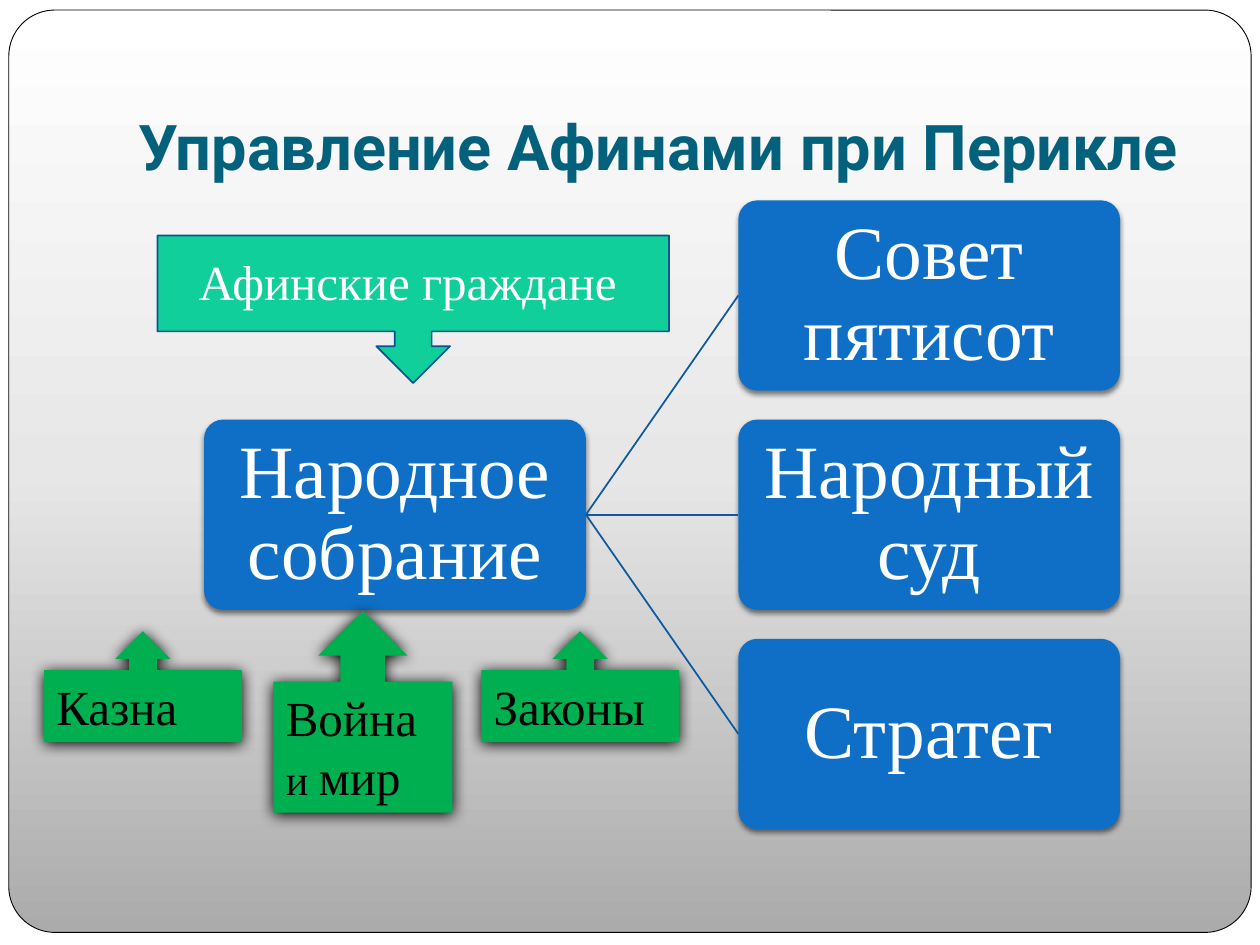
from dataclasses import dataclass

from lxml.etree import SubElement
from pptx import Presentation
from pptx.dml.color import RGBColor
from pptx.enum.shapes import MSO_CONNECTOR, MSO_SHAPE
from pptx.enum.text import MSO_ANCHOR, MSO_AUTO_SIZE, PP_ALIGN
from pptx.oxml.ns import qn
from pptx.shapes.autoshape import Shape
from pptx.slide import Slide
from pptx.util import Inches, Pt


@dataclass(frozen=True)
class Theme:
    title_font: str = "Roboto"
    body_font: str = "Times New Roman"
    title: str = "04617B"
    body: str = "0F6FC6"
    link: str = "0C599F"
    power: str = "00B050"
    citizens: str = "10CF9B"
    citizens_line: str = "0B5292"
    light: str = "FFFFFF"
    dark: str = "000000"
    backdrop: tuple = ((0, "ABABAB"), (50, "E7E7E7"), (100, "FFFFFF"))
    title_size: int = 36
    body_size: int = 43
    label_size: int = 28
    small_size: int = 24


@dataclass(frozen=True)
class Box:
    left: float
    top: float
    width: float
    height: float

    def emu(self) -> tuple:
        return tuple(Inches(v) for v in (self.left, self.top, self.width, self.height))


@dataclass(frozen=True)
class Shadow:
    opacity: int
    blur: float
    distance: float


@dataclass(frozen=True)
class Power:
    runs: tuple
    box: Box


THEME = Theme()
BODY_WIDTH, BODY_HEIGHT = 3.03, 1.51
BODY_TOP, BODY_STEP = 1.59, 1.74
ASSEMBLY_LEFT, BRANCH_LEFT = 1.62, 5.86
BODY_SHADOW = Shadow(50, 3, 2)
POWER_SHADOW = Shadow(100, 8.5, 1)
BRANCHES = ("Совет пятисот", "Народный суд", "Стратег")
POWERS = (
    Power((("Казна", THEME.label_size),), Box(0.35, 5.01, 1.57, 0.88)),
    Power((("Законы", THEME.label_size),), Box(3.82, 5.01, 1.57, 0.88)),
    Power(
        (("Война", THEME.label_size), (" и ", THEME.small_size), ("мир", THEME.label_size)),
        Box(2.17, 4.85, 1.42, 1.6),
    ),
)


def rgb(value: str) -> RGBColor:
    return RGBColor.from_string(value)


def style_font(font, name: str, color: str, size: int | None = None) -> None:
    font.name = name
    font.color.rgb = rgb(color)
    if size:
        font.size = Pt(size)


def add_plain(slide: Slide, kind: MSO_SHAPE, box: Box, fill: str) -> Shape:
    shape = slide.shapes.add_shape(kind, *box.emu())
    shape.shadow.inherit = False
    shape.fill.solid()
    shape.fill.fore_color.rgb = rgb(fill)
    shape.line.fill.background()
    return shape


def outline(shape: Shape, color: str, width: float) -> None:
    shape.line.color.rgb = rgb(color)
    shape.line.width = Pt(width)


def cast_shadow(shape: Shape, shadow: Shadow) -> None:
    effects = shape._element.spPr.find(qn("a:effectLst"))
    outer = SubElement(
        effects, qn("a:outerShdw"), blurRad=str(int(Pt(shadow.blur))),
        dist=str(int(Pt(shadow.distance))), dir="5400000", rotWithShape="0",
    )
    color = SubElement(outer, qn("a:srgbClr"), val=THEME.dark)
    SubElement(color, qn("a:alpha"), val=str(shadow.opacity * 1000))


def add_frame(slide: Slide) -> None:
    frame = add_plain(slide, MSO_SHAPE.ROUNDED_RECTANGLE, Box(0.07, 0.08, 9.86, 7.32), THEME.light)
    frame.adjustments[0] = 0.05
    outline(frame, THEME.dark, 0.5)
    frame.fill.gradient()
    gradient = frame._element.spPr.find(qn("a:gradFill"))
    for child in list(gradient):
        gradient.remove(child)
    stops = SubElement(gradient, qn("a:gsLst"))
    for position, color in THEME.backdrop:
        stop = SubElement(stops, qn("a:gs"), pos=str(position * 1000))
        SubElement(stop, qn("a:srgbClr"), val=color)
    SubElement(gradient, qn("a:lin"), ang="16200000", scaled="0")
    slide.shapes._spTree.insert(2, frame._element)


def add_title(slide: Slide, text: str) -> None:
    title = slide.shapes.title
    title.left, title.top, title.width, title.height = Box(1, 0.3, 8.5, 1.25).emu()
    frame = title.text_frame
    frame.text = text
    frame.auto_size = MSO_AUTO_SIZE.NONE
    frame.vertical_anchor = MSO_ANCHOR.BOTTOM
    frame.margin_bottom = Inches(0.1)
    paragraph = frame.paragraphs[0]
    paragraph.alignment = PP_ALIGN.LEFT
    paragraph.font.bold = True
    style_font(paragraph.font, THEME.title_font, THEME.title, THEME.title_size)


def add_body(slide: Slide, text: str, left: float, row: int) -> Shape:
    box = Box(left, BODY_TOP + row * BODY_STEP, BODY_WIDTH, BODY_HEIGHT)
    body = add_plain(slide, MSO_SHAPE.ROUNDED_RECTANGLE, box, THEME.body)
    body.adjustments[0] = 0.1
    cast_shadow(body, BODY_SHADOW)
    frame = body.text_frame
    frame.word_wrap = True
    frame.vertical_anchor = MSO_ANCHOR.MIDDLE
    frame.margin_left = frame.margin_right = Inches(0.03)
    frame.margin_top = frame.margin_bottom = Inches(0.03)
    frame.text = text
    paragraph = frame.paragraphs[0]
    paragraph.alignment = PP_ALIGN.CENTER
    paragraph.line_spacing = 0.9
    style_font(paragraph.font, THEME.body_font, THEME.light, THEME.body_size)
    return body


def link(slide: Slide, source: Shape, target: Shape) -> None:
    line = slide.shapes.add_connector(MSO_CONNECTOR.STRAIGHT, 0, 0, 0, 0)
    line.begin_connect(source, 3)
    line.end_connect(target, 1)
    line.line.color.rgb = rgb(THEME.link)
    line.line.width = Pt(1)
    SubElement(line._element.spPr, qn("a:effectLst"))


def add_power(slide: Slide, power: Power) -> None:
    callout = add_plain(slide, MSO_SHAPE.UP_ARROW_CALLOUT, power.box, THEME.power)
    cast_shadow(callout, POWER_SHADOW)
    frame = callout.text_frame
    frame.word_wrap = True
    frame.vertical_anchor = MSO_ANCHOR.TOP
    paragraph = frame.paragraphs[0]
    paragraph.alignment = PP_ALIGN.LEFT
    style_font(paragraph.font, THEME.body_font, THEME.dark)
    for text, size in power.runs:
        run = paragraph.add_run()
        run.text = text
        run.font.size = Pt(size)


def add_citizens(slide: Slide, text: str) -> None:
    callout = add_plain(slide, MSO_SHAPE.DOWN_ARROW_CALLOUT, Box(1.25, 1.87, 4.06, 1.17), THEME.citizens)
    outline(callout, THEME.citizens_line, 1)
    frame = slide.shapes.add_textbox(*Box(1.48, 1.95, 3.98, 0.57).emu()).text_frame
    frame.word_wrap = True
    frame.text = text
    style_font(frame.paragraphs[0].font, THEME.body_font, THEME.light, THEME.label_size)


def main() -> None:
    deck = Presentation()
    deck.slide_width, deck.slide_height = Inches(10), Inches(7.5)
    slide = deck.slides.add_slide(deck.slide_layouts[5])
    add_frame(slide)
    add_title(slide, "Управление Афинами при Перикле")
    assembly = add_body(slide, "Народное собрание", ASSEMBLY_LEFT, 1)
    for row, name in enumerate(BRANCHES):
        link(slide, assembly, add_body(slide, name, BRANCH_LEFT, row))
    for power in POWERS:
        add_power(slide, power)
    add_citizens(slide, "Афинские граждане")
    deck.save("out.pptx")


if __name__ == "__main__":
    main()
